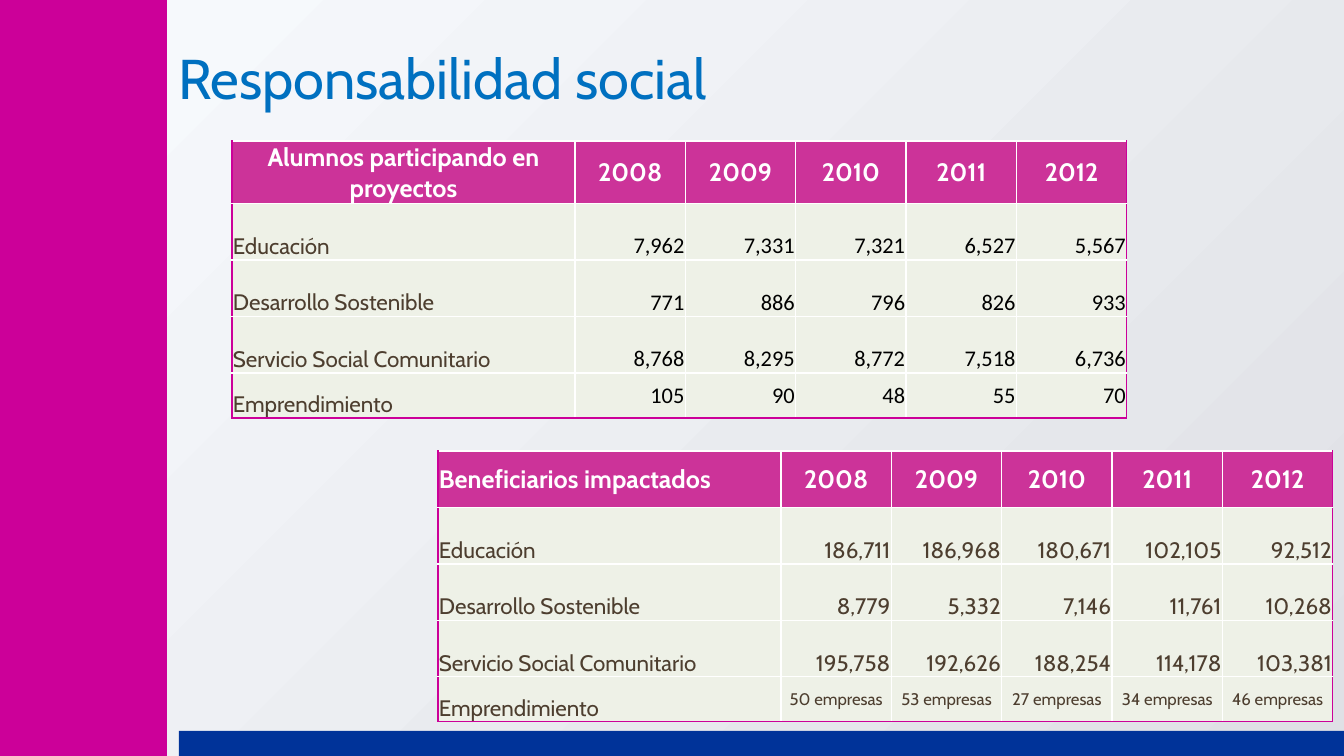
from lxml import etree
from pptx import Presentation
from pptx import util as u
from pptx.dml.color import RGBColor
from pptx.enum import shapes, text
from pptx.oxml import ns

EMU_PER_PX = 914400 / 100.8
MAGENTA, PINK, BLUE, NAVY = "CC0099", "CC3399", "0070C0", "003399"
WHITE, BLACK, BROWN, CREAM = "FFFFFF", "000000", "4D3E2F", "EEF1E7"
LEFT, CENTER, RIGHT = text.PP_ALIGN.LEFT, text.PP_ALIGN.CENTER, text.PP_ALIGN.RIGHT
MIDDLE, BOTTOM = text.MSO_ANCHOR.MIDDLE, text.MSO_ANCHOR.BOTTOM


def px(length):
    return u.Emu(round(length * EMU_PER_PX))


def paint(color, value):
    color.rgb = RGBColor.from_string(value)


deck = Presentation()
deck.slide_width, deck.slide_height = px(1344), px(756)
page = deck.slides.add_slide(deck.slide_layouts[5])

# Background: glow spreading from the top left corner
background = page.background.fill
background.gradient()
for stop, value in zip(background.gradient_stops, ("F8FBFE", "DFE0E5")):
    paint(stop.color, value)
for stop, position in zip(background.gradient_stops, (0, 1)):
    stop.position = position
gradient = page.element.find(".//" + ns.qn("a:gradFill"))
gradient.remove(gradient.find(ns.qn("a:lin")))
glow = etree.SubElement(gradient, ns.qn("a:path"), path="circle")
etree.SubElement(glow, ns.qn("a:fillToRect"), r="100000", b="100000")

# Side and bottom bands
for left, top, width, height, value in (
    (179, 731, 1165, 25, NAVY),
    (0, 0, 167, 756, MAGENTA),
):
    band = page.shapes.add_shape(
        shapes.MSO_SHAPE.RECTANGLE, px(left), px(top), px(width), px(height))
    band.shadow.inherit = False
    band.fill.solid()
    paint(band.fill.fore_color, value)
    band.line.fill.background()

# Title
title = page.shapes.title
title.left, title.top, title.width, title.height = px(168), px(19), px(984), px(97)
title.text_frame.auto_size = text.MSO_AUTO_SIZE.NONE
title.text_frame.vertical_anchor = BOTTOM
para = title.text_frame.paragraphs[0]
para.alignment = LEFT
para.line_spacing = u.Pt(40)
span = para.add_run()
span.text = "Responsabilidad social"
span.font.name, span.font.size = "Cabin", u.Pt(40)
paint(span.font.color, BLUE)

# Tables
YEARS = ("2008", "2009", "2010", "2011", "2012")
TOPICS = ("Educación", "Desarrollo Sostenible", "Servicio Social Comunitario",
          "Emprendimiento")
beneficiaries = (
    ("186,711", "186,968", "180,671", "102,105", "92,512"),
    ("8,779", "5,332", "7,146", "11,761", "10,268"),
    ("195,758", "192,626", "188,254", "114,178", "103,381"),
    ("50 empresas", "53 empresas", "27 empresas", "34 empresas", "46 empresas"),
)
students = (
    ("7,962", "7,331", "7,321", "6,527", "5,567"),
    ("771", "886", "796", "826", "933"),
    ("8,768", "8,295", "8,772", "7,518", "6,736"),
    ("105", "90", "48", "55", "70"),
)
WIDTH, HEIGHT, TOPIC_WIDTH, LAST_HEIGHT = 895, 271, 343, 45
LAST_ROW, LAST_COL = len(TOPICS), len(YEARS)

# place, heading, its alignment, figures, their font and colour, last row's size and alignment
for left, top, heading, heading_align, figures, font, ink, last_size, last_align in (
    (438, 451, "Beneficiarios impactados", LEFT, beneficiaries,
     "Cabin", BROWN, 12, CENTER),
    (232, 141, "Alumnos participando en proyectos", CENTER, students,
     "Calibri", BLACK, 16, RIGHT),
):
    grid = page.shapes.add_table(
        LAST_ROW + 1, LAST_COL + 1, px(left), px(top), px(WIDTH), px(HEIGHT)).table
    grid.horz_banding = False
    for c, column in enumerate(grid.columns):
        column.width = px((WIDTH - TOPIC_WIDTH) / LAST_COL if c else TOPIC_WIDTH)
    for r, row in enumerate(grid.rows):
        row.height = px(LAST_HEIGHT if r == LAST_ROW else (HEIGHT - LAST_HEIGHT) / LAST_ROW)

    lines = [(heading, *YEARS)]
    lines += [(topic, *values) for topic, values in zip(TOPICS, figures)]
    for r, line in enumerate(lines):
        for c, words in enumerate(line):
            cell = grid.cell(r, c)

            # Magenta on the outer left, right and bottom edges, white elsewhere
            for side, outer in (("L", c == 0), ("R", c == LAST_COL),
                                ("T", False), ("B", r == LAST_ROW)):
                edge = etree.SubElement(
                    cell._tc.get_or_add_tcPr(), ns.qn("a:ln" + side), w="12700")
                solid = etree.SubElement(edge, ns.qn("a:solidFill"))
                etree.SubElement(
                    solid, ns.qn("a:srgbClr"), val=MAGENTA if outer else WHITE)
            cell.fill.solid()
            paint(cell.fill.fore_color, CREAM if r else PINK)
            cell.margin_left = cell.margin_right = cell.margin_top = px(1)
            cell.margin_bottom = 0

            # Text style by part of the table
            face, size, value, align, anchor = "Cabin", 16, BROWN, LEFT, BOTTOM
            if r == 0:
                size, value, anchor = 18, WHITE, MIDDLE
                align = CENTER if c else heading_align
            elif c:
                face, value, align = font, ink, RIGHT
                if r == LAST_ROW:
                    size, align, anchor = last_size, last_align, MIDDLE
            cell.vertical_anchor = anchor
            para = cell.text_frame.paragraphs[0]
            para.alignment = align
            span = para.add_run()
            span.text = words
            span.font.name, span.font.size, span.font.bold = face, u.Pt(size), r == 0
            paint(span.font.color, value)

deck.save("out.pptx")
